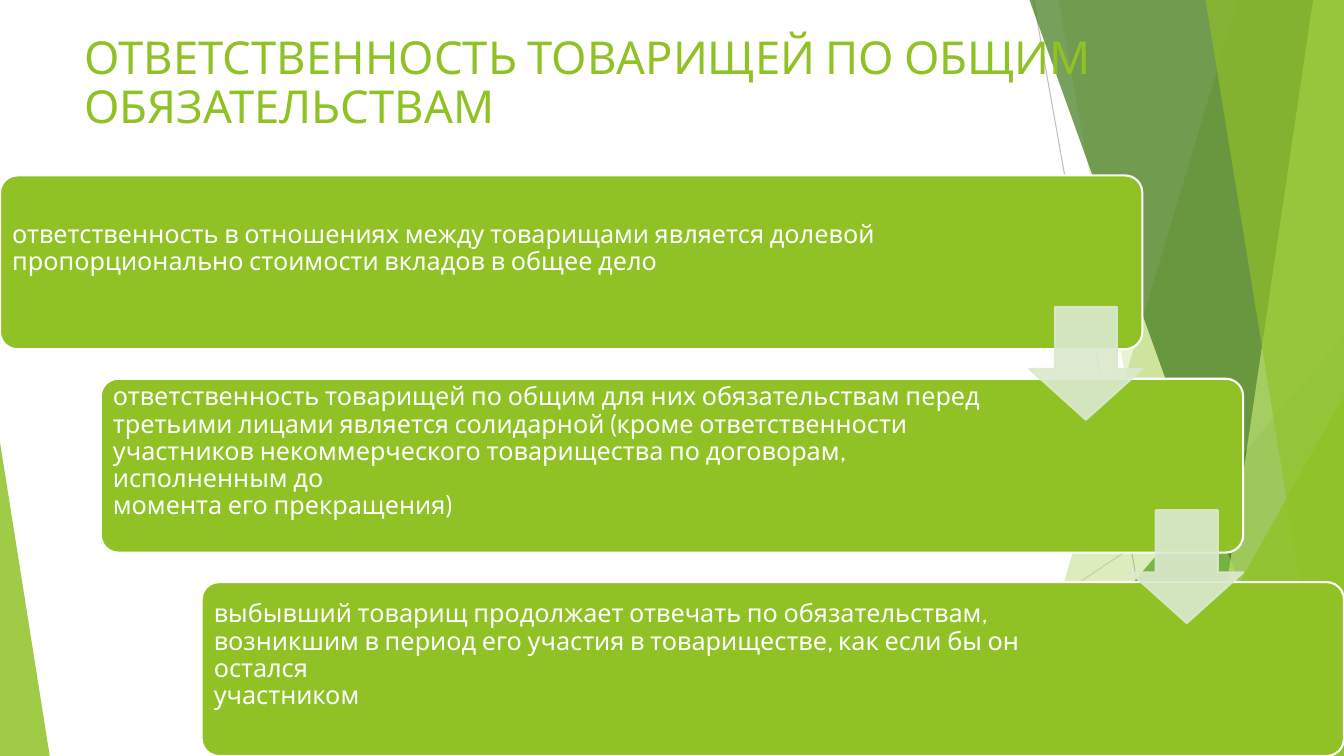
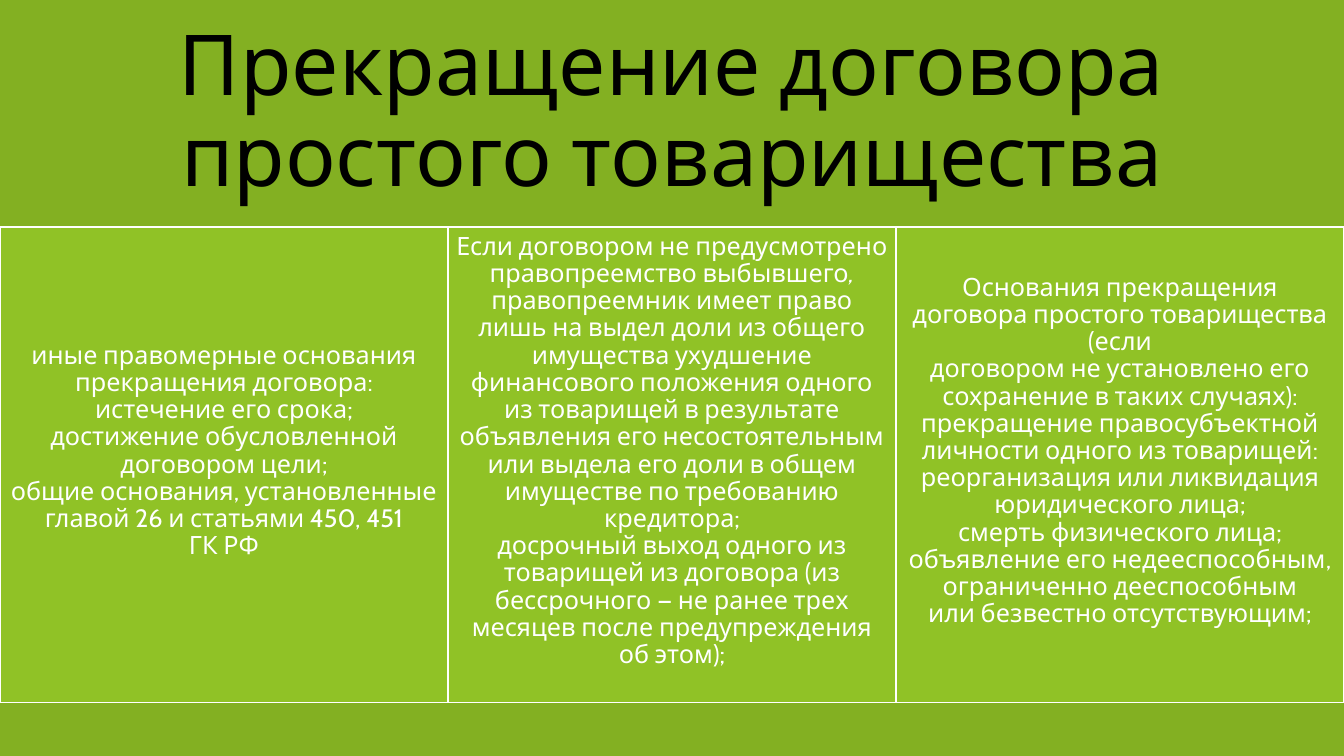
import lxml.etree
import pptx
import pptx.dml.color
import pptx.enum.shapes
import pptx.enum.text
import pptx.oxml.ns
import pptx.util

COLORS = {
    "white": "FFFFFF", "black": "000000", "lime": "90C226", "olive": "83B022",
    "green": "54A021", "forest": "3F7819", "pale": "C0E474", "mist": "DBE9CD",
    "gray": "BFBFBF", "silver": "D9D9D9",
}
FONT = "Cabin"
WIDTH, HEIGHT = 13.33, 7.5
SHAPE = pptx.enum.shapes.MSO_SHAPE
ALIGN = pptx.enum.text.PP_ALIGN
ANCHOR = pptx.enum.text.MSO_ANCHOR
PAD = 0.07
BODY_PAD = (PAD, PAD, PAD, 0.34)

# Left edge at the top, left edge at the bottom, colour, opacity
BANDS_BACK = [(92.1, 75.3, "lime", 30), (78.75, 88.75, "lime", 20)]
BANDS_FRONT = [(76.6, 96.8, "forest", 70), (97.7, 89.4, "pale", 70),
               (89.7, 98.85, "lime", 65)]

# Text and right inset in inches
STEPS = [
    ("ответственность в отношениях между товарищами является долевой\n"
     "пропорционально стоимости вкладов в общее дело", 1.83),
    ("ответственность товарищей по общим для них обязательствам перед\n"
     "третьими лицами является солидарной (кроме ответственности участников "
     "некоммерческого товарищества по договорам, исполненным до\n"
     "момента его прекращения)", 2.19),
    ("выбывший товарищ продолжает отвечать по обязательствам, возникшим в период "
     "его участия в товариществе, как если бы он остался\nучастником", 2.19),
]

# Each column is a list of runs: text, italic
COLUMNS = [
    [("иные правомерные основания прекращения договора:\n"
      "истечение его срока;\n"
      "достижение обусловленной договором цели;\n"
      "общие основания, установленные главой 26 и статьями 450, 451\n"
      "ГК РФ", False)],
    [("Если договором не предусмотрено правопреемство выбывшего", False),
     (", ", True),
     ("правопреемник имеет право лишь на выдел доли из общего имущества ухудшение "
      "финансового положения одного из товарищей в результате объявления его "
      "несостоятельным или выдела его доли в общем имуществе по требованию кредитора;\n"
      "досрочный выход одного из товарищей из договора (из бессрочного — не ранее "
      "трех месяцев после предупреждения об этом);", False)],
    [("Основания прекращения договора простого товарищества (если\n"
      "договором не установлено его сохранение в таких случаях):\n"
      "прекращение правосубъектной личности одного из товарищей:\n"
      "реорганизация или ликвидация юридического лица;\n"
      "смерть физического лица;\n"
      "объявление его недееспособным, ограниченно дееспособным\n"
      "или безвестно отсутствующим;", False)],
]


class Deck:
    """Holds the style and the current slide; lengths are percent of the slide."""

    def __init__(self):
        self.prs = pptx.Presentation()
        self.prs.slide_width = pptx.util.Inches(WIDTH)
        self.prs.slide_height = pptx.util.Inches(HEIGHT)
        self.shapes = None

    def x(self, share):
        return pptx.util.Inches(WIDTH * share / 100)

    def y(self, share):
        return pptx.util.Inches(HEIGHT * share / 100)

    def rgb(self, name):
        return pptx.dml.color.RGBColor.from_string(COLORS[name])

    def new_slide(self):
        self.shapes = self.prs.slides.add_slide(self.prs.slide_layouts[6]).shapes
        self.facets()

    def paint(self, format_, color, opacity=100):
        """Give a fill or a line a solid colour with opacity in percent."""
        fill = getattr(format_, "fill", format_)
        fill.solid()
        fill.fore_color.rgb = self.rgb(color)
        if opacity < 100:
            parent = fill._xPr
            clr = parent.find(".//" + pptx.oxml.ns.qn("a:srgbClr"))
            alpha = lxml.etree.SubElement(clr, pptx.oxml.ns.qn("a:alpha"))
            alpha.set("val", str(opacity * 1000))

    def finish(self, sp, color, opacity, line):
        sp.shadow.inherit = False
        self.paint(sp.fill, color, opacity)
        if line:
            self.paint(sp.line, line, opacity)
            sp.line.width = pptx.util.Pt(1.5)
        else:
            sp.line.fill.background()
        return sp

    def shape(self, kind, x, y, w, h, color, opacity=100, line=None, adj=()):
        sp = self.shapes.add_shape(kind, self.x(x), self.y(y), self.x(w), self.y(h))
        for i, value in enumerate(adj):
            sp.adjustments[i] = value
        return self.finish(sp, color, opacity, line)

    def band(self, top, bottom, color, opacity):
        """Draw a slanted band that reaches the right edge of the slide."""
        fb = self.shapes.build_freeform(self.x(top), 0)
        fb.add_line_segments([(self.x(100), 0), (self.x(100), self.y(100)),
                              (self.x(bottom), self.y(100))])
        self.finish(fb.convert_to_shape(), color, opacity, None)

    def line(self, x1, y1, x2, y2, color):
        cn = self.shapes.add_connector(
            pptx.enum.shapes.MSO_CONNECTOR.STRAIGHT,
            self.x(x1), self.y(y1), self.x(x2), self.y(y2))
        cn.line.color.rgb = self.rgb(color)
        cn.line.width = pptx.util.Pt(0.75)
        lxml.etree.SubElement(cn._element.spPr, pptx.oxml.ns.qn("a:effectLst"))

    def facets(self):
        self.line(76.9, 0, 86.9, 100, "gray")
        self.line(100, 53.7, 60.9, 100, "silver")
        for band in BANDS_BACK:
            self.band(*band)
        self.shape(SHAPE.ISOSCELES_TRIANGLE, 73.3, 44.4, 26.7, 55.6, "green", 72, adj=[1])
        for band in BANDS_FRONT:
            self.band(*band)
        self.shape(SHAPE.ISOSCELES_TRIANGLE, 85, 52.4, 15, 47.6, "lime", 80, adj=[1])
        self.shape(SHAPE.ISOSCELES_TRIANGLE, 0, 58.5, 3.7, 41.5, "lime", 85, adj=[0])

    def text(self, sp, runs, size=18, color="white", align=ALIGN.LEFT,
             anchor=ANCHOR.MIDDLE, pad=BODY_PAD):
        """Fill a shape with (text, italic) runs; pad is left, top, right, bottom."""
        tf = sp.text_frame
        tf.word_wrap = True
        tf.vertical_anchor = anchor
        tf.margin_left, tf.margin_top, tf.margin_right, tf.margin_bottom = map(
            pptx.util.Inches, pad)
        p = tf.paragraphs[0]
        p.alignment = align
        p.line_spacing = 0.9
        for content, italic in runs:
            for i, part in enumerate(content.split("\n")):
                if i:
                    p.add_line_break()
                r = p.add_run()
                r.text = part
                r.font.name = FONT
                r.font.size = pptx.util.Pt(size)
                r.font.italic = italic
                r.font.color.rgb = self.rgb(color)

    def title(self, content):
        sp = self.shapes.add_textbox(self.x(5.55), self.y(4), self.x(87), self.y(19.2))
        self.text(sp, [(content, False)], 32.4, "lime", anchor=ANCHOR.TOP,
                  pad=(0.1, 0.05, 0.1, 0.05))

    def staircase(self, steps):
        """Draw boxes that descend to the lower right corner, joined by arrows."""
        w, h, dx, dy, arrow = 85, 23, 7.5, 26.9, 8.4
        top = 100 - h - dy * (len(steps) - 1)
        for i, (content, right) in enumerate(steps):
            sp = self.shape(SHAPE.ROUNDED_RECTANGLE, dx * i, top + dy * i, w, h,
                            "lime", line="white", adj=[0.1])
            self.text(sp, [(content, False)], pad=(PAD, PAD, right, 0.34))
        for i in range(len(steps) - 1):
            self.shape(SHAPE.DOWN_ARROW, dx * i + w - arrow, top + dy * i + h - 5.6,
                       arrow, arrow * WIDTH / HEIGHT, "mist", 90, "mist", [0.55, 0.45])

    def column_panel(self, heading, columns):
        """Draw a heading band, equal columns and a footer band."""
        head, foot = 30, 7
        sp = self.shape(SHAPE.RECTANGLE, 0, 0, 100, head, "olive")
        self.text(sp, [(heading, False)], 60, "black", ALIGN.CENTER, pad=[0.25] * 4)
        w = 100 / len(columns)
        for i, runs in enumerate(columns):
            sp = self.shape(SHAPE.RECTANGLE, w * i, head, w, 100 - head - foot,
                            "lime", line="white")
            self.text(sp, runs, align=ALIGN.CENTER)
        self.shape(SHAPE.RECTANGLE, 0, 100 - foot, 100, foot, "olive")


def main():
    deck = Deck()
    deck.new_slide()
    deck.title("ОТВЕТСТВЕННОСТЬ ТОВАРИЩЕЙ ПО ОБЩИМ\nОБЯЗАТЕЛЬСТВАМ")
    deck.staircase(STEPS)
    deck.new_slide()
    deck.column_panel("Прекращение договора простого товарищества", COLUMNS)
    deck.prs.save("out.pptx")


if __name__ == "__main__":
    main()
